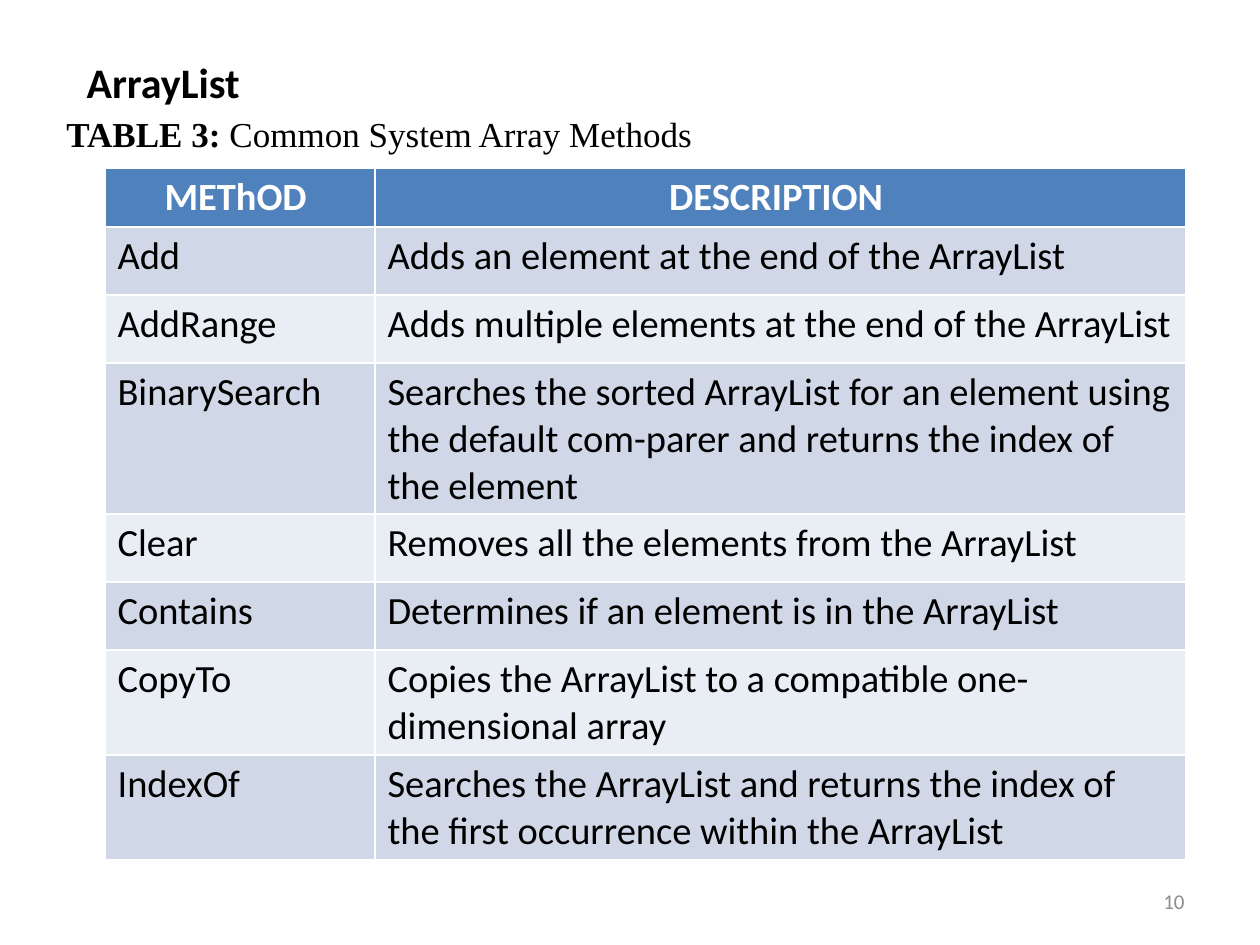
"""Build a slide with a table of common ArrayList methods."""
from pptx import Presentation
from pptx.dml.color import RGBColor
from pptx.enum.text import MSO_ANCHOR, PP_ALIGN
from pptx.util import Pt

EMU_PER_PX = 7257
COLORS = {
    "text": "000000",
    "header": "4F81BD",
    "header_text": "FFFFFF",
    "band_dark": "D0D8E8",
    "band_light": "E9EDF4",
    "number": "8C8C8C",
}
METHODS = [
    ("METhOD ", "DESCRIPTION "),
    ("Add", "Adds an element at the end of the ArrayList"),
    ("AddRange", "Adds multiple elements at the end of the ArrayList"),
    ("BinarySearch", "Searches the sorted ArrayList for an element using the "
                     "default com-parer and returns the index of the element"),
    ("Clear", "Removes all the elements from the ArrayList"),
    ("Contains", "Determines if an element is in the ArrayList"),
    ("CopyTo", "Copies the ArrayList to a compatible one-dimensional array"),
    ("IndexOf", "Searches the ArrayList and returns the index of the first "
                "occurrence within the ArrayList"),
]
COL_WIDTHS = [270, 811]
ROW_HEIGHTS = [54, 68, 68, 140, 68, 68, 97, 97]


def px(*lengths):
    return [n * EMU_PER_PX for n in lengths]


class SlideBuilder:
    def __init__(self, prs, font="Calibri"):
        self.font = font
        self.s = prs.slides.add_slide(prs.slide_layouts[5])

    def style(self, r, size, color="text", bold=False, font=None):
        r.font.name = font or self.font
        r.font.size = Pt(size)
        r.font.bold = bold
        r.font.color.rgb = RGBColor.from_string(COLORS[color])

    def title(self, box, text, size):
        sp = self.s.shapes.title
        sp.left, sp.top, sp.width, sp.height = px(*box)
        tf = sp.text_frame
        tf.text = text
        tf.word_wrap = False
        tf.vertical_anchor = MSO_ANCHOR.TOP
        p = tf.paragraphs[0]
        p.alignment = PP_ALIGN.LEFT
        self.style(p.runs[0], size, bold=True)

    def text(self, box, runs, size, color="text", font=None,
             align=PP_ALIGN.LEFT, anchor=MSO_ANCHOR.TOP):
        tf = self.s.shapes.add_textbox(*px(*box)).text_frame
        tf.word_wrap = True
        tf.vertical_anchor = anchor
        p = tf.paragraphs[0]
        p.alignment = align
        for text, bold in runs:
            r = p.add_run()
            r.text = text
            self.style(r, size, color, bold, font)

    def table(self, box, rows, widths, heights, size):
        table = self.s.shapes.add_table(len(rows), len(widths), *px(*box)).table
        for col, width in zip(table.columns, px(*widths)):
            col.width = width
        for row, height in zip(table.rows, px(*heights)):
            row.height = height
        for i, values in enumerate(rows):
            header = i == 0
            fill = "header" if header else "band_dark" if i % 2 else "band_light"
            for cell, value in zip(table.rows[i].cells, values):
                cell.fill.solid()
                cell.fill.fore_color.rgb = RGBColor.from_string(COLORS[fill])
                cell.text_frame.text = value
                p = cell.text_frame.paragraphs[0]
                p.alignment = PP_ALIGN.CENTER if header else PP_ALIGN.LEFT
                self.style(p.runs[0], size, "header_text" if header else "text", header)


def main():
    prs = Presentation()
    prs.slide_width, prs.slide_height = px(1260, 945)
    b = SlideBuilder(prs)
    b.text((54, 106, 1101, 55),
           [("TABLE 3: ", True), ("Common System Array Methods", False)],
           20, font="Times New Roman")
    b.title((74, 50, 188, 63), "ArrayList", 24)
    b.table((105, 168, 1081, 693), METHODS, COL_WIDTHS, ROW_HEIGHTS, 22)
    b.text((903, 876, 294, 50), [("10", False)], 12, "number",
           align=PP_ALIGN.RIGHT, anchor=MSO_ANCHOR.MIDDLE)
    prs.save("out.pptx")


if __name__ == "__main__":
    main()
